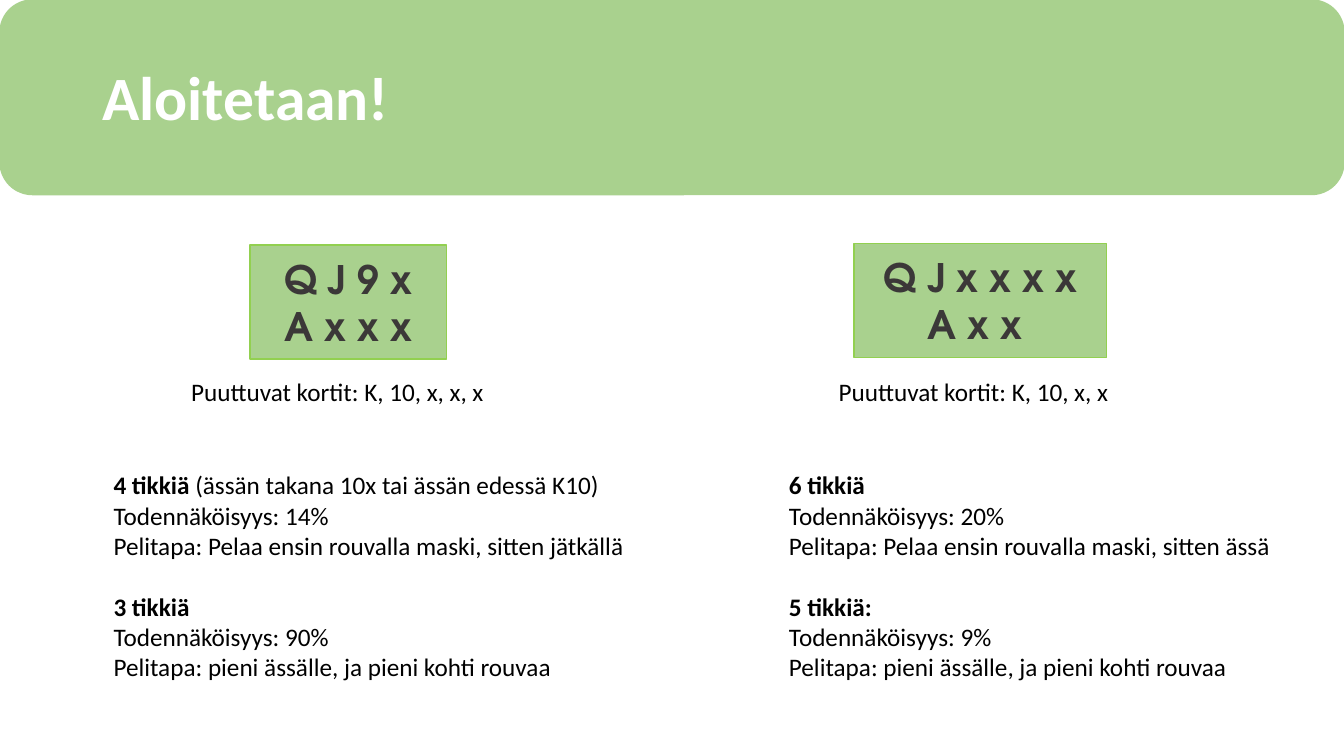
from pptx import Presentation
from pptx.dml.color import RGBColor
from pptx.enum.shapes import MSO_SHAPE
from pptx.enum.text import MSO_ANCHOR, PP_ALIGN
from pptx.util import Pt

GREEN = RGBColor(0xA9, 0xD1, 0x8E)
LIME = RGBColor(0x92, 0xD0, 0x50)
CHARCOAL = RGBColor(0x3B, 0x38, 0x38)
BLACK = RGBColor(0x00, 0x00, 0x00)
WHITE = RGBColor(0xFF, 0xFF, 0xFF)
TEXT_FONT = "Calibri"
CARD_FONT = "TeX Gyre Adventor"
SLIDE_WIDTH, SLIDE_HEIGHT = 960, 540


class SlideBuilder:
    def __init__(self, slide):
        self.slide = slide
        self.shapes = slide.shapes

    def style(self, paragraph, size, color, bold=False, font=TEXT_FONT):
        paragraph.font.name = font
        paragraph.font.size = Pt(size)
        paragraph.font.bold = bold
        paragraph.font.color.rgb = color

    def box(self, preset, left, top, width, height, line_color):
        box = self.shapes.add_shape(preset, Pt(left), Pt(top), Pt(width), Pt(height))
        box.shadow.inherit = False
        box.fill.solid()
        box.fill.fore_color.rgb = GREEN
        box.line.color.rgb = line_color
        box.line.width = Pt(1)
        return box

    def title(self, text, left, top, width, height):
        title = self.shapes.title
        title.left, title.top = Pt(left), Pt(top)
        title.width, title.height = Pt(width), Pt(height)
        title.text_frame.text = text
        title.text_frame.vertical_anchor = MSO_ANCHOR.MIDDLE
        heading = title.text_frame.paragraphs[0]
        heading.alignment = PP_ALIGN.LEFT
        heading.line_spacing = 0.9
        self.style(heading, 44, WHITE, bold=True)
        self.shapes._spTree.append(title._element)

    def hand(self, cards, left, top, width, height):
        hand = self.box(MSO_SHAPE.RECTANGLE, left, top, width, height, LIME)
        frame = hand.text_frame
        frame.text = cards
        frame.word_wrap = False
        frame.vertical_anchor = MSO_ANCHOR.MIDDLE
        for row in frame.paragraphs:
            row.alignment = PP_ALIGN.CENTER
            self.style(row, 28, CHARCOAL, bold=True, font=CARD_FONT)

    def text_frame(self, left, top, width, height):
        frame = self.shapes.add_textbox(Pt(left), Pt(top), Pt(width), Pt(height)).text_frame
        frame.word_wrap = True
        return frame

    def caption(self, text, left, top, width, height):
        frame = self.text_frame(left, top, width, height)
        frame.text = text
        self.style(frame.paragraphs[0], 18, BLACK)

    def plans(self, plans, left, top, width, height):
        frame = self.text_frame(left, top, width, height)
        for index, (tricks, remark, chance, play) in enumerate(plans):
            heading = frame.add_paragraph() if index else frame.paragraphs[0]
            heading.space_before = Pt(22 if index else 0)
            self.style(heading, 18, BLACK, bold=not remark)
            tricks_run = heading.add_run()
            tricks_run.text = tricks
            if remark:
                tricks_run.font.bold = True
                heading.add_run().text = remark
            for detail in (f"Todennäköisyys: {chance}", f"Pelitapa: {play}"):
                line = frame.add_paragraph()
                line.text = detail
                self.style(line, 18, BLACK)


def main():
    presentation = Presentation()
    presentation.slide_width = Pt(SLIDE_WIDTH)
    presentation.slide_height = Pt(SLIDE_HEIGHT)
    builder = SlideBuilder(presentation.slides.add_slide(presentation.slide_layouts[5]))

    builder.box(MSO_SHAPE.ROUNDED_RECTANGLE, 0, 0, SLIDE_WIDTH, 139, GREEN)
    builder.title("Aloitetaan!", 66, 19.5, 828, 104.5)

    low_play = "pieni ässälle, ja pieni kohti rouvaa"
    mask_play = "Pelaa ensin rouvalla maski, sitten"

    builder.hand("Q J 9 x\nA x x x", 178.5, 175, 140.5, 81.5)
    builder.caption("Puuttuvat kortit: K, 10, x, x, x", 129.5, 265.5, 238.5, 29)
    builder.plans([
        ("4 tikkiä ", "(ässän takana 10x tai ässän edessä K10)", "14%", f"{mask_play} jätkällä"),
        ("3 tikkiä", "", "90%", low_play),
    ], 74, 332, 405.5, 160)

    builder.hand("Q J x x x x\nA x x ", 610, 174, 180.5, 81.5)
    builder.caption("Puuttuvat kortit: K, 10, x, x", 592, 265.5, 238.5, 29)
    builder.plans([
        ("6 tikkiä", "", "20%", f"{mask_play} ässä"),
        ("5 tikkiä:", "", "9%", low_play),
    ], 556.5, 332, 390, 160)

    presentation.save("out.pptx")


if __name__ == "__main__":
    main()
